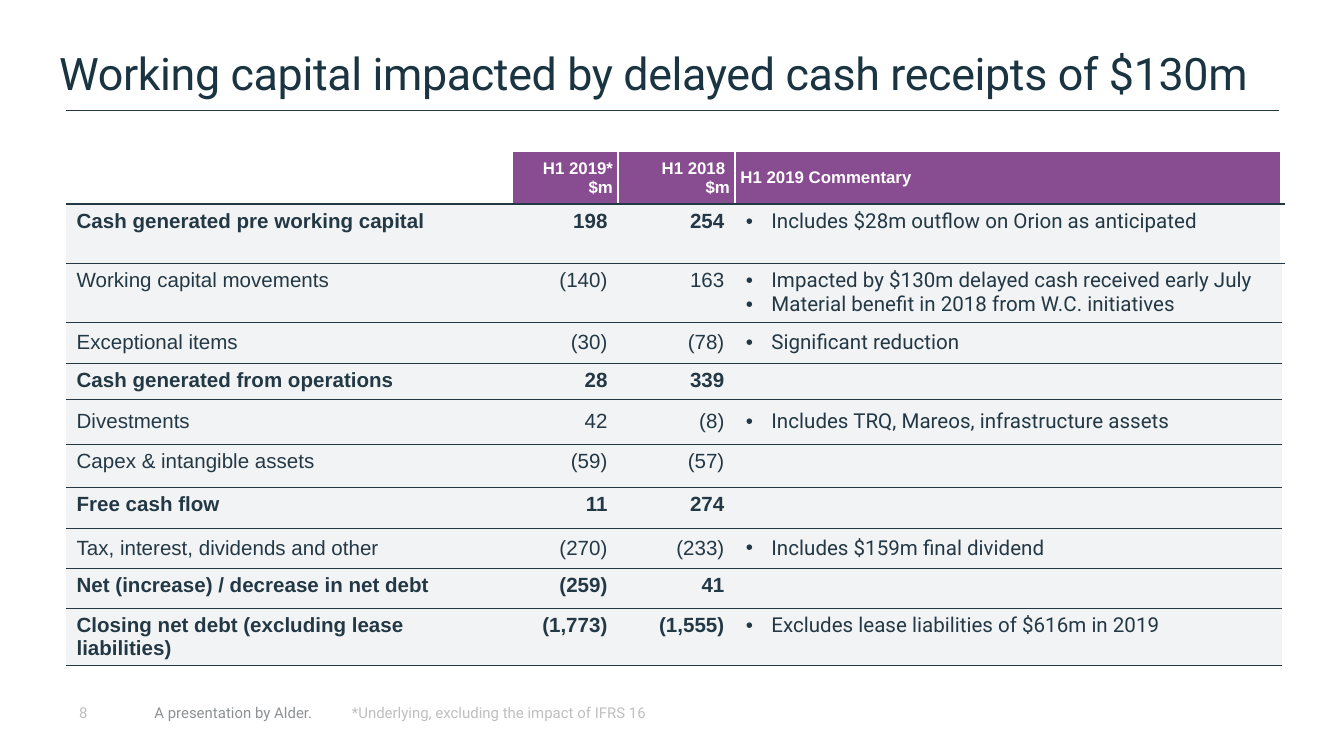
from lxml import etree
from pptx import Presentation, util as u
from pptx.dml.color import RGBColor
from pptx.enum import shapes, text
from pptx.oxml import ns

NAVY = RGBColor(0x23, 0x38, 0x45)
TITLE = RGBColor(0x1A, 0x34, 0x41)
PURPLE = RGBColor(0x88, 0x4C, 0x91)
PALE = RGBColor(0xF2, 0xF3, 0xF4)
WHITE = RGBColor(0xFF, 0xFF, 0xFF)
GREY = RGBColor(0x8D, 0x91, 0x94)
LIGHT = RGBColor(0xBF, 0xBF, 0xBF)
PLAIN_TABLE = "{2D5ABB26-0587-4C30-8999-92F81FD0307C}"
TOP, MIDDLE, BOTTOM = (text.MSO_ANCHOR.TOP, text.MSO_ANCHOR.MIDDLE,
                       text.MSO_ANCHOR.BOTTOM)

COLS = [3.33, 0.78, 0.87, 4.07]
HEADER_HEIGHT = 0.39
HEADERS = ["", "H1 2019* $m", "H1 2018 \v$m", "H1 2019 Commentary"]
ROWS = [
    (0.44, TOP, True, "Cash generated pre working capital", "198", "254",
     ["Includes $28m outflow on Orion as anticipated"]),
    (0.44, TOP, False, "Working capital movements", "(140)", "163",
     ["Impacted by $130m delayed cash received early July",
      "Material benefit in 2018 from W.C. initiatives"]),
    (0.3, MIDDLE, False, "Exceptional items", "(30)", "(78)",
     ["Significant reduction"]),
    (0.26, MIDDLE, True, "Cash generated from operations", "28", "339", []),
    (0.34, MIDDLE, False, "Divestments", "42", "(8)",
     ["Includes TRQ, Mareos, infrastructure assets"]),
    (0.32, TOP, False, "Capex & intangible assets", "(59)", "(57)", []),
    (0.3, TOP, True, "Free cash flow", "11", "274", []),
    (0.3, MIDDLE, False, "Tax, interest, dividends and other", "(270)", "(233)",
     ["Includes $159m final dividend"]),
    (0.3, TOP, True, "Net (increase) / decrease in net debt", "(259)", "41", []),
    (0.27, TOP, True, "Closing net debt (excluding lease liabilities)",
     "(1,773)", "(1,555)", ["Excludes lease liabilities of $616m in 2019"]),
]


class Deck:
    def __init__(self):
        self.prs = Presentation()
        self.prs.slide_width = u.Inches(10)
        self.prs.slide_height = u.Inches(10 * 9 / 16)
        self.s = self.prs.slides.add_slide(self.prs.slide_layouts[6])

    def style(self, p, size, color, font="Roboto", bold=False, spacing=0):
        for r in p.runs:
            r.font.size, r.font.name, r.font.bold = u.Pt(size), font, bold
            r.font.color.rgb = color
            if spacing:
                r.font._element.set("spc", str(spacing))
        if not p.runs:
            etree.SubElement(p._p, ns.qn("a:endParaRPr"), sz=str(size * 100))

    def rule(self, x1, x2, y):
        line = self.s.shapes.add_connector(
            shapes.MSO_CONNECTOR.STRAIGHT,
            u.Inches(x1), u.Inches(y), u.Inches(x2), u.Inches(y))
        line.line.color.rgb, line.line.width = NAVY, u.Pt(0.5)
        etree.SubElement(line._element.spPr, ns.qn("a:effectLst"))

    def label(self, x, y, w, h, words, size, color, anchor=MIDDLE, inset=0.1,
              spacing=0):
        tf = self.s.shapes.add_textbox(
            u.Inches(x), u.Inches(y), u.Inches(w), u.Inches(h)).text_frame
        tf.word_wrap, tf.vertical_anchor = True, anchor
        tf.margin_left = tf.margin_right = u.Inches(inset)
        tf.margin_top = tf.margin_bottom = u.Inches(inset / 2)
        tf.text = words
        self.style(tf.paragraphs[0], size, color, spacing=spacing)

    def bullet(self, p):
        pPr = p._p.get_or_add_pPr()
        pPr.set("marL", str(u.Inches(0.19)))
        pPr.set("indent", str(-u.Inches(0.19)))
        etree.SubElement(pPr, ns.qn("a:buFont"), typeface="Arial")
        etree.SubElement(pPr, ns.qn("a:buChar"), char="•")

    def borders(self, cell, **sides):
        tcPr = cell._tc.get_or_add_tcPr()
        for side in "LRTB":
            if side in sides:
                color, width = sides[side]
                ln = etree.SubElement(tcPr, ns.qn("a:ln" + side),
                                      w=str(u.Pt(width)))
                fill = etree.SubElement(ln, ns.qn("a:solidFill"))
                etree.SubElement(fill, ns.qn("a:srgbClr"), val=str(color))

    def cell(self, cell, lines, size, color, fill, anchor, side_inset,
             font="Arial", bold=False, right=False, bullets=False, after=0):
        cell.margin_left = cell.margin_right = u.Inches(side_inset)
        cell.margin_top = cell.margin_bottom = u.Inches(0.04)
        cell.vertical_anchor = anchor
        if fill is None:
            cell.fill.background()
        else:
            cell.fill.solid()
            cell.fill.fore_color.rgb = fill
        tf = cell.text_frame
        for i, words in enumerate(lines or [""]):
            p = tf.add_paragraph() if i else tf.paragraphs[0]
            p.text = words
            if right:
                p.alignment = text.PP_ALIGN.RIGHT
            if after:
                p.space_after = u.Pt(after)
            if bullets and words:
                self.bullet(p)
            self.style(p, size, color, font, bold)

    def table(self, x, y):
        heights = [HEADER_HEIGHT] + [row[0] for row in ROWS]
        tbl = self.s.shapes.add_table(
            len(heights), len(COLS), u.Inches(x), u.Inches(y),
            u.Inches(sum(COLS)), u.Inches(sum(heights))).table
        tbl.first_row = tbl.horz_banding = False
        tbl._tbl.tblPr.find(ns.qn("a:tableStyleId")).text = PLAIN_TABLE
        for col, width in zip(tbl.columns, COLS):
            col.width = u.Inches(width)
        for row, height in zip(tbl.rows, heights):
            row.height = u.Inches(height)

        for c, words in enumerate(HEADERS):
            cell, sides = tbl.cell(0, c), {"B": (NAVY, 1)}
            if c > 0:
                sides["R"] = (WHITE, 3 if c == 3 else 1.5)
            if c > 1:
                sides["L"] = (WHITE, 1.5)
            self.borders(cell, **sides)
            self.cell(cell, [words], 9, WHITE, PURPLE if c else None, MIDDLE,
                      0.04, bold=True, right=c in (1, 2))

        for n, (_, anchor, bold, name, now, before, notes) in enumerate(ROWS, 1):
            for c, lines in enumerate(([name], [now], [before], notes)):
                cell = tbl.cell(n, c)
                sides = {"T": (NAVY, 1 if n == 1 else 0.25), "B": (NAVY, 0.25)}
                if n == 1 and c == 3:
                    sides["R"] = (WHITE, 3)
                self.borders(cell, **sides)
                note = c == 3
                self.cell(cell, lines, 11, NAVY, PALE, anchor, 0.08,
                          font="Roboto" if note else "Arial",
                          bold=bold and not note, right=c in (1, 2),
                          bullets=note, after=6 if c == 0 and n != 2 else 0)


def main():
    deck = Deck()
    deck.rule(0.49, 9.52, 0.82)
    deck.table(0.49, 1.13)
    deck.label(0.44, 0.24, 9.25, 0.5,
               "Working capital impacted by delayed cash receipts of $130m",
               24, TITLE, BOTTOM, inset=0, spacing=-20)
    deck.label(0.49, 5.2, 0.56, 0.21, "8", 8, LIGHT, spacing=-100)
    deck.label(1.05, 5.2, 1.47, 0.21, "A presentation by Alder.", 8, GREY)
    deck.label(2.52, 5.2, 6.03, 0.21,
               "*Underlying, excluding the impact of IFRS 16", 8, LIGHT)
    deck.prs.save("out.pptx")


if __name__ == "__main__":
    main()
